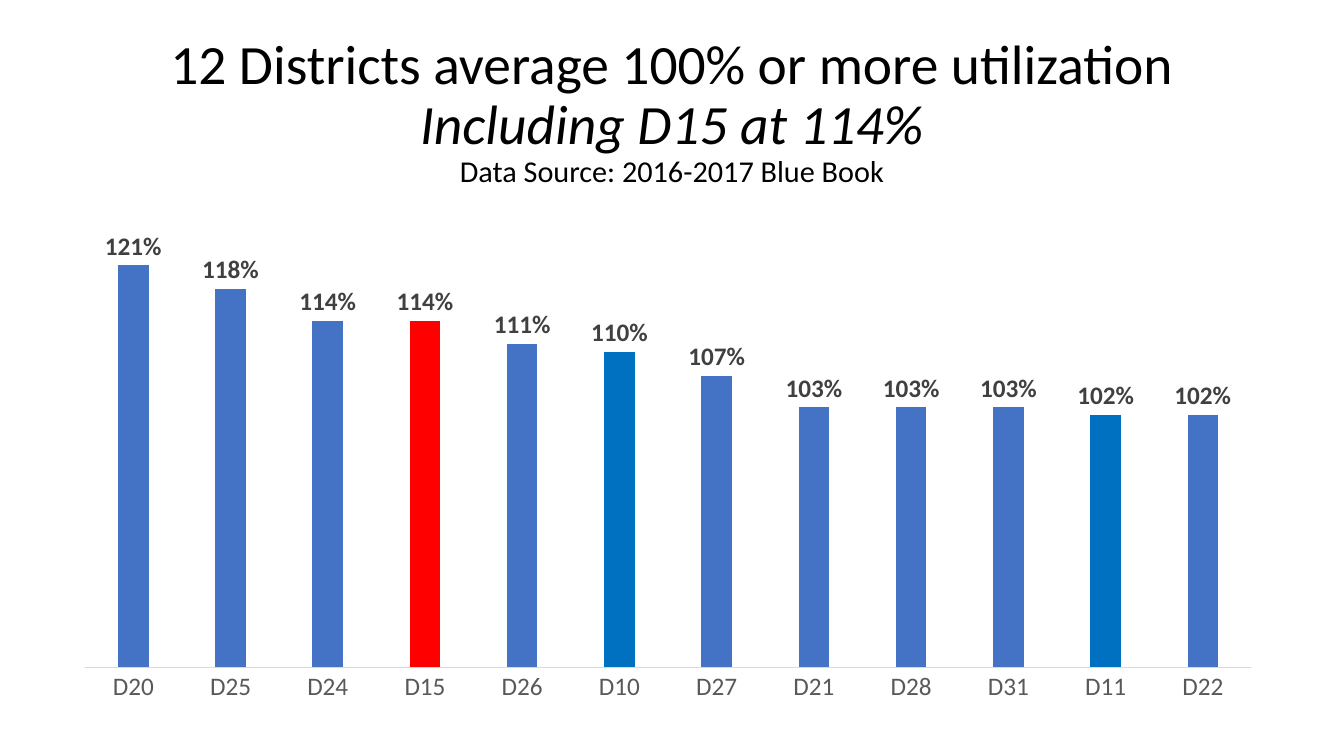
from pptx import Presentation
from pptx import util as u
from pptx.chart.data import CategoryChartData
from pptx.dml.color import RGBColor
from pptx.enum import chart as ch, text
from pptx.oxml import parse_xml
from pptx.oxml.ns import nsdecls

FONT = "Calibri"
BLACK = RGBColor(0, 0, 0)
DARK = RGBColor(0x40, 0x40, 0x40)
GREY = RGBColor(0x59, 0x59, 0x59)
RULE = RGBColor(0xD9, 0xD9, 0xD9)
BLUE = RGBColor(0x44, 0x72, 0xC4)
AZURE = RGBColor(0x00, 0x70, 0xC0)
RED = RGBColor(0xFF, 0, 0)

TITLE = [
    ("12 Districts average 100% or more utilization", 39.6, False),
    ("Including D15 at 114%", 39.6, True),
    ("Data Source: 2016-2017 Blue Book", 21.6, False),
]
RATES = {
    "D20": 1.21, "D25": 1.18, "D24": 1.14, "D15": 1.14,
    "D26": 1.11, "D10": 1.10, "D27": 1.07, "D21": 1.03,
    "D28": 1.03, "D31": 1.03, "D11": 1.02, "D22": 1.02,
}
MARKED = {"D15": RED, "D10": AZURE, "D11": AZURE}


def style(font, size, color, bold=False, italic=False):
    font.name = FONT
    font.size = u.Pt(size)
    font.color.rgb = color
    font.bold = bold
    font.italic = italic


def paint(fill, color):
    fill.solid()
    fill.fore_color.rgb = color


def add_title(slide):
    box = slide.shapes.add_textbox(u.Cm(2.33), u.Cm(1.01), u.Cm(29.21), u.Cm(3.68))
    frame = box.text_frame
    frame.word_wrap = True
    frame.vertical_anchor = text.MSO_ANCHOR.MIDDLE
    para = frame.paragraphs[0]
    para.alignment = text.PP_ALIGN.CENTER
    para.line_spacing = 0.9
    for i, (line, size, italic) in enumerate(TITLE):
        if i:
            para.add_line_break()
        run = para.add_run()
        run.text = line
        style(run.font, size, BLACK, italic=italic)


def place_plot(chart, x, y, w, h):
    """Fix the inner plot area, in fractions of the chart."""
    parts = "".join(f'<c:{name} val="{val}"/>' for name, val in (
        ("layoutTarget", "inner"), ("xMode", "edge"), ("yMode", "edge"),
        ("x", x), ("y", y), ("w", w), ("h", h)))
    area = chart.element.find(".//{*}plotArea")
    for old in area.findall("{*}layout"):
        area.remove(old)
    area.insert(0, parse_xml(
        f'<c:layout {nsdecls("c")}><c:manualLayout>{parts}</c:manualLayout></c:layout>'))


def style_axes(chart):
    cat = chart.category_axis
    cat.major_tick_mark = ch.XL_TICK_MARK.NONE
    cat.has_major_gridlines = False
    style(cat.tick_labels.font, 18, GREY)
    cat.format.line.color.rgb = RULE
    cat.format.line.width = u.Pt(0.75)
    val = chart.value_axis
    val.minimum_scale = 0.7
    val.maximum_scale = 1.3
    val.has_major_gridlines = False
    val.visible = False


def style_bars(plot):
    plot.gap_width = 219
    plot.overlap = -27
    plot.vary_by_categories = False
    bars = plot.series[0]
    paint(bars.format.fill, BLUE)
    for i, name in enumerate(RATES):
        if name in MARKED:
            paint(bars.points[i].format.fill, MARKED[name])
    tags = bars.data_labels
    tags.show_value = True
    tags.position = ch.XL_LABEL_POSITION.OUTSIDE_END
    tags.number_format = "0%"
    tags.number_format_is_linked = False
    style(tags.font, 18, DARK, bold=True)


def add_bars(slide):
    data = CategoryChartData(number_format="0%")
    data.categories = list(RATES)
    data.add_series("Series 1", list(RATES.values()))
    chart = slide.shapes.add_chart(
        ch.XL_CHART_TYPE.COLUMN_CLUSTERED,
        u.Cm(1.35), u.Cm(4.9), u.Cm(30.2), u.Cm(13.13), data).chart
    chart.has_title = False
    chart.has_legend = False
    style(chart.font, 10, BLACK)
    style_axes(chart)
    style_bars(chart.plots[0])
    place_plot(chart, 0.026, 0, 0.974, 0.908)


def main():
    deck = Presentation()
    deck.slide_width = u.Cm(33.87)
    deck.slide_height = u.Cm(19.05)
    slide = deck.slides.add_slide(deck.slide_layouts[6])
    add_title(slide)
    add_bars(slide)
    deck.save("out.pptx")


if __name__ == "__main__":
    main()
